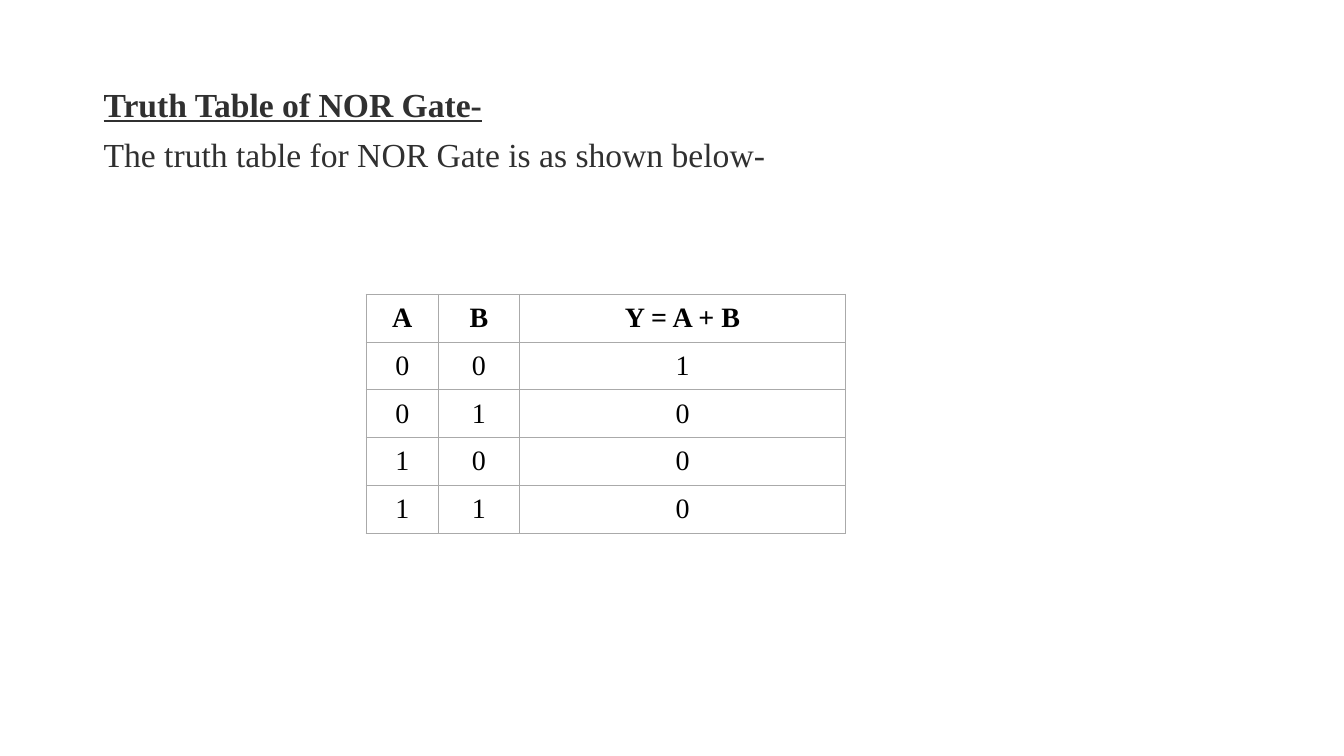
from lxml import etree
from pptx import Presentation
from pptx.dml.color import RGBColor
from pptx.enum.text import MSO_ANCHOR, PP_ALIGN
from pptx.oxml.ns import qn
from pptx.util import Inches, Pt

CENTER = PP_ALIGN.CENTER
MIDDLE = MSO_ANCHOR.MIDDLE
FONT = "Times New Roman"
WHITE = RGBColor(0xFF, 0xFF, 0xFF)
BLACK = RGBColor(0x00, 0x00, 0x00)
CHARCOAL = RGBColor(0x30, 0x30, 0x30)
GRAY = RGBColor(0xAA, 0xAA, 0xAA)

COLUMN_WIDTHS = (0.72, 0.8, 3.24)
TRUTH_ROWS = (
    ("A", "B", "Y = A + B"),
    ("0", "0", "1"),
    ("0", "1", "0"),
    ("1", "0", "0"),
    ("1", "1", "0"),
)


def add_span(para, text, size, color, bold=False, underline=False):
    span = para.add_run()
    span.text = text
    span.font.name = FONT
    span.font.size = Pt(size)
    span.font.color.rgb = color
    span.font.bold = bold
    span.font.underline = underline


def add_borders(cell):
    properties = cell._tc.get_or_add_tcPr()
    for side in ("lnL", "lnR", "lnT", "lnB"):
        line = etree.SubElement(properties, qn(f"a:{side}"), w=str(Pt(0.75)))
        fill = etree.SubElement(line, qn("a:solidFill"))
        etree.SubElement(fill, qn("a:srgbClr"), val=str(GRAY))


def add_intro(page, left, top, width, height):
    box = page.shapes.add_textbox(Inches(left), Inches(top), Inches(width), Inches(height))
    frame = box.text_frame
    frame.word_wrap = True
    lines = (
        (frame.paragraphs[0], "Truth Table of NOR Gate-", True),
        (frame.add_paragraph(), "The truth table for NOR Gate is as shown below-", False),
    )
    for para, text, heading in lines:
        para.line_spacing = 0.9
        para.space_before = Pt(10)
        add_span(para, text, 24, CHARCOAL, bold=heading, underline=heading)


def fill_cell(cell, text, heading):
    cell.vertical_anchor = MIDDLE
    cell.margin_left = cell.margin_right = Inches(0.1)
    cell.margin_top = cell.margin_bottom = Inches(0.07)
    add_borders(cell)
    cell.fill.solid()
    cell.fill.fore_color.rgb = WHITE
    para = cell.text_frame.paragraphs[0]
    para.alignment = CENTER
    add_span(para, text, 20, BLACK, bold=heading)


def add_truth_table(page, left, top, width, height):
    table = page.shapes.add_table(
        len(TRUTH_ROWS), len(COLUMN_WIDTHS),
        Inches(left), Inches(top), Inches(width), Inches(height),
    ).table
    table.horz_banding = False
    for column, share in zip(table.columns, COLUMN_WIDTHS):
        column.width = Inches(width * share / sum(COLUMN_WIDTHS))
    for row, texts in enumerate(TRUTH_ROWS):
        for column, text in enumerate(texts):
            fill_cell(table.cell(row, column), text, heading=row == 0)


def main():
    deck = Presentation()
    deck.slide_width = Inches(13.33)
    deck.slide_height = Inches(7.5)
    page = deck.slides.add_slide(deck.slide_layouts[6])
    add_intro(page, 0.93, 0.83, 11.5, 6.36)
    add_truth_table(page, 3.63, 2.92, 4.76, 2.37)
    deck.save("out.pptx")


if __name__ == "__main__":
    main()
